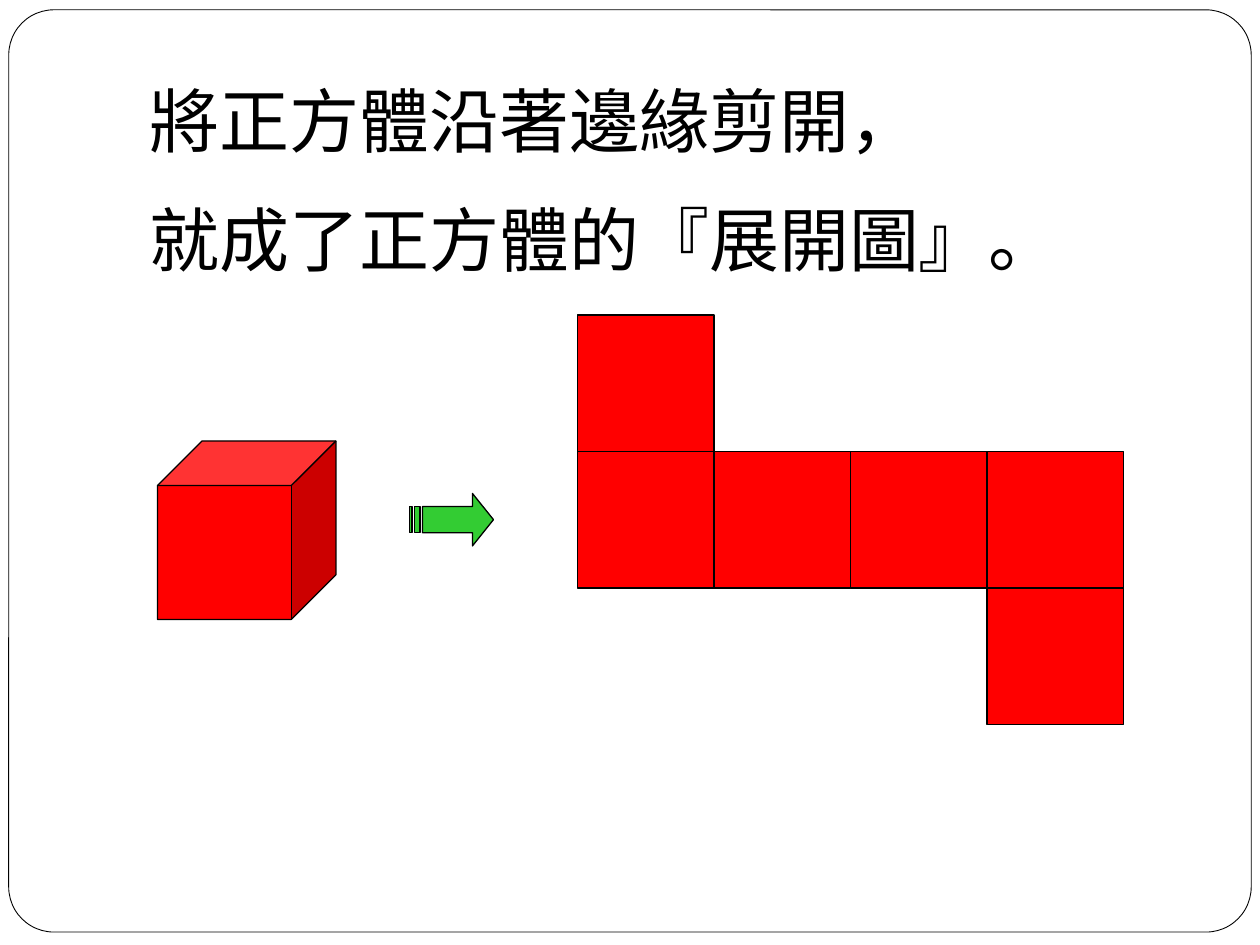
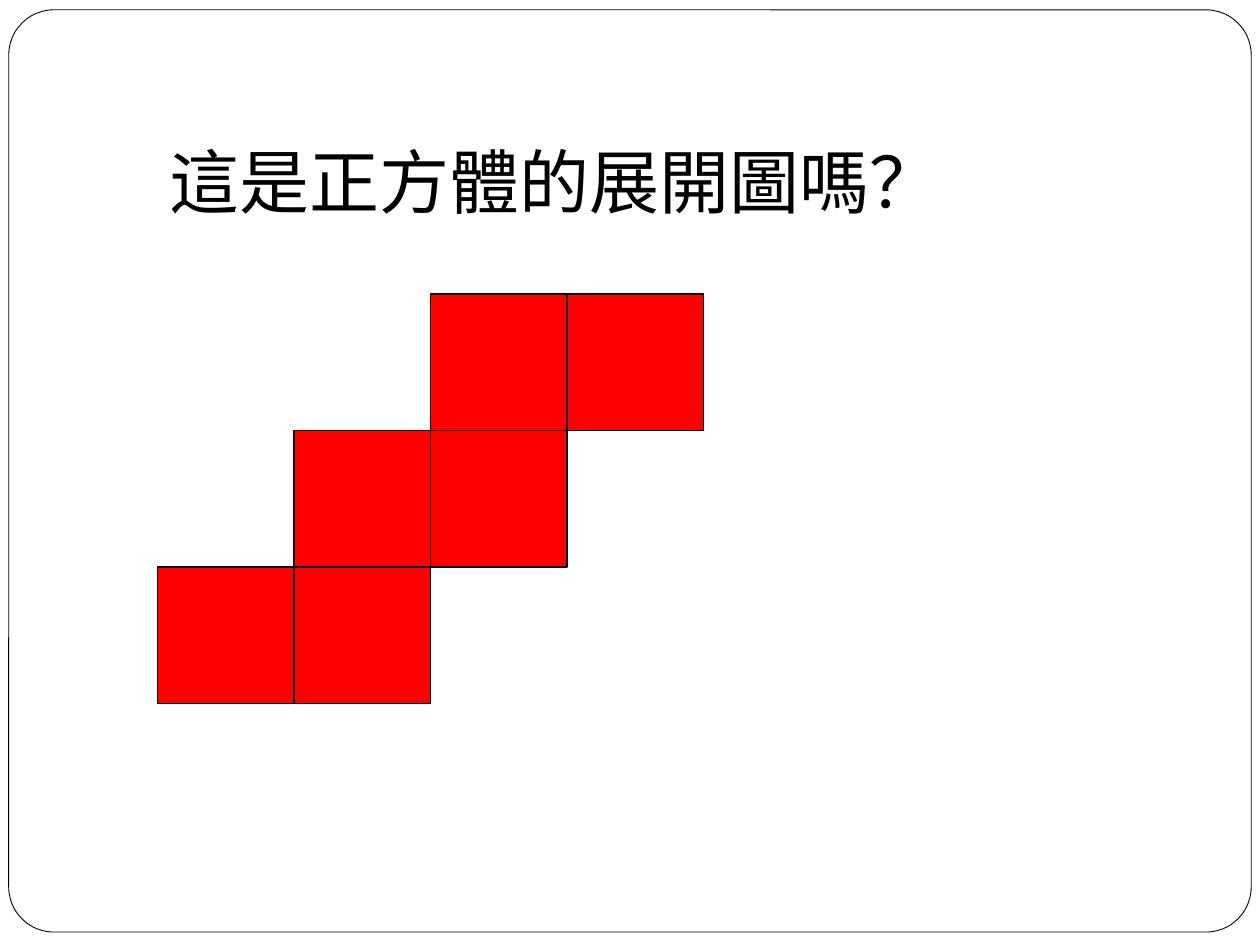
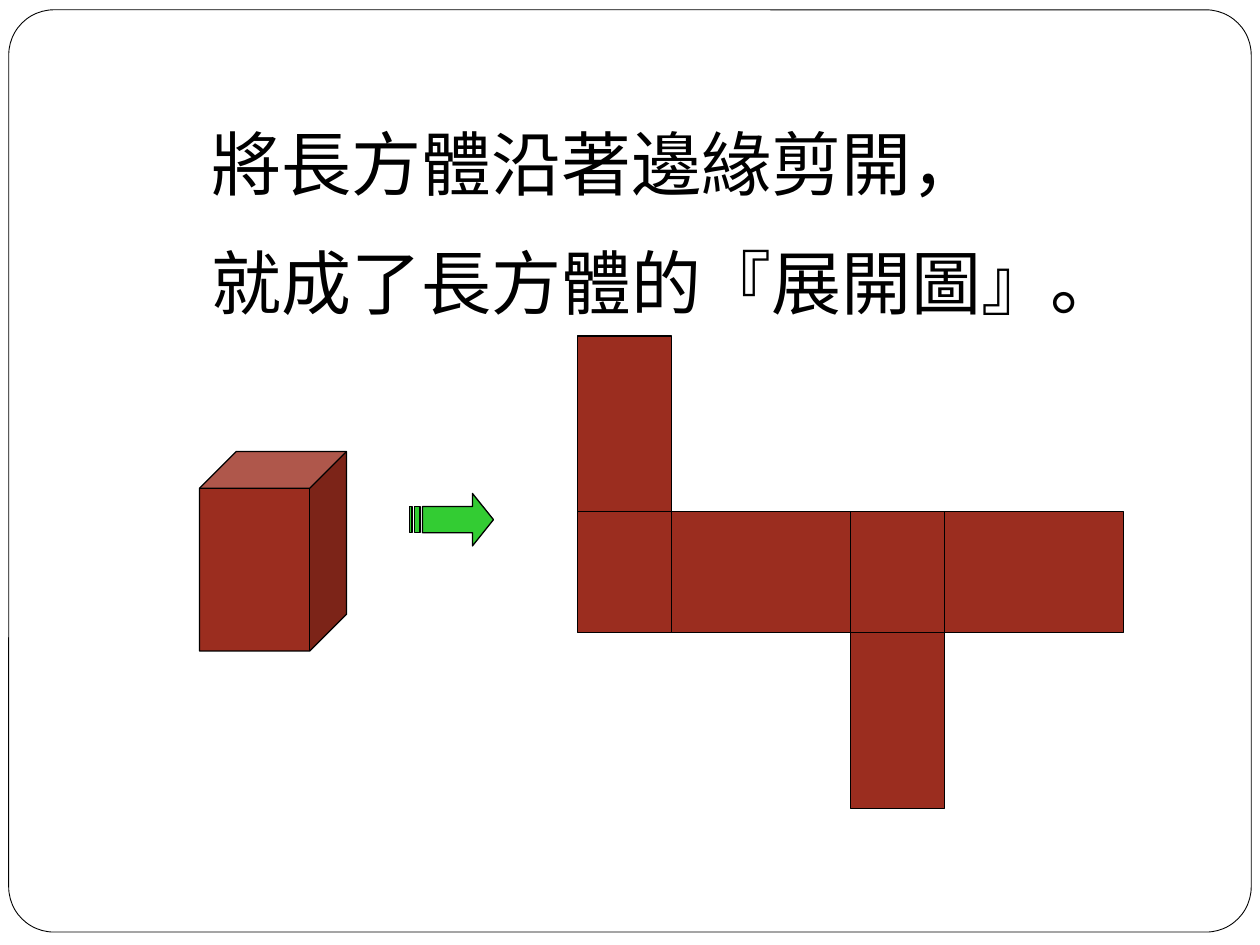
import pptx
import pptx.dml.color
import pptx.enum.shapes
import pptx.enum.text
import pptx.oxml.ns
import pptx.util
import lxml.etree

Pt = pptx.util.Pt
SHAPES = pptx.enum.shapes.MSO_SHAPE
FONT_NAME = "Noto Sans CJK JP"
COLORS = {
    "background": "FFFFFF",
    "ink": "000000",
    "cube": "FF0000",
    "cuboid": "9B2D1F",
    "arrow": "33CC33",
}
SQUARE = 78
CUBOID_COLUMNS = [53.6, 102.4, 53.6, 102.4]
CUBOID_ROWS = [100.5, 69, 100.5]


def rgb(name):
    return pptx.dml.color.RGBColor.from_string(COLORS[name])


def paint(shape, fill, line_width=0.75):
    shape.shadow.inherit = False
    shape.fill.solid()
    shape.fill.fore_color.rgb = rgb(fill)
    shape.line.color.rgb = rgb("ink")
    shape.line.width = Pt(line_width)


def add_preset(shapes, preset, box, fill, line_width=0.75):
    shape = shapes.add_shape(preset, *map(Pt, box))
    paint(shape, fill, line_width)
    return shape


def add_framed_slide(presentation):
    slide = presentation.slides.add_slide(presentation.slide_layouts[6])
    frame = add_preset(
        slide.shapes, SHAPES.ROUNDED_RECTANGLE, (5, 5.6, 710, 527), "background", 0.5
    )
    frame.adjustments[0] = 0.049
    return slide


def add_statement(slide, box, lines):
    text_frame = slide.shapes.add_textbox(*map(Pt, box)).text_frame
    text_frame.word_wrap = True
    text_frame.auto_size = pptx.enum.text.MSO_AUTO_SIZE.SHAPE_TO_FIT_TEXT
    text_frame.margin_top = Pt(7)
    text_frame.text = "\n".join(lines)
    for paragraph in text_frame.paragraphs:
        paragraph.line_spacing = Pt(48)
        paragraph.space_after = Pt(20)
        paragraph.font.size = Pt(40)
        paragraph.font.name = FONT_NAME
        paragraph.font.color.rgb = rgb("ink")
        qn = pptx.oxml.ns.qn
        properties = paragraph._p.pPr.find(qn("a:defRPr"))
        lxml.etree.SubElement(properties, qn("a:ea")).set("typeface", FONT_NAME)


def add_net(slide, left, top, columns, rows, cells, fill):
    group = slide.shapes.add_group_shape()
    for row, column in cells:
        box = (
            left + sum(columns[:column]),
            top + sum(rows[:row]),
            columns[column],
            rows[row],
        )
        add_preset(group.shapes, SHAPES.RECTANGLE, box, fill)


def add_solid(slide, box, fill):
    add_preset(slide.shapes, SHAPES.CUBE, box, fill)


def add_striped_arrow(slide, left, top):
    head = [(36, 0), (36, 7.5), (7.5, 7.5), (7.5, 22.5), (36, 22.5), (36, 30), (48, 15)]
    stripes = [
        [(start, 7.5), (start, 22.5), (end, 22.5), (end, 7.5)]
        for start, end in ((3, 6), (0, 1.5))
    ]
    builder = None
    for outline in [head, *stripes]:
        points = [(Pt(left + x), Pt(top + y)) for x, y in outline]
        if builder is None:
            builder = slide.shapes.build_freeform(*points[0])
        else:
            builder.move_to(*points[0])
        builder.add_line_segments(points[1:], close=True)
    paint(builder.convert_to_shape(), "arrow")


def build_cube_slide(presentation):
    slide = add_framed_slide(presentation)
    cells = [(1, 0), (1, 1), (1, 2), (1, 3), (0, 0), (2, 3)]
    add_net(slide, 330, 180, [SQUARE] * 4, [SQUARE] * 3, cells, "cube")
    add_statement(
        slide,
        (78.5, 37.5, 580, 128),
        ["將正方體沿著邊緣剪開，", "就成了正方體的『展開圖』。"],
    )
    add_solid(slide, (90, 252, 102, 102), "cube")
    add_striped_arrow(slide, 234, 282)


def build_question_slide(presentation):
    slide = add_framed_slide(presentation)
    cells = [(2, 0), (2, 1), (1, 2), (0, 2), (1, 1), (0, 3)]
    add_net(slide, 90, 168, [SQUARE] * 4, [SQUARE] * 3, cells, "cube")
    add_statement(slide, (90, 72, 519, 55.5), ["這是正方體的展開圖嗎？"])


def build_cuboid_slide(presentation):
    slide = add_framed_slide(presentation)
    add_statement(
        slide,
        (114, 62, 535, 128),
        ["將長方體沿著邊緣剪開，", "就成了長方體的『展開圖』。"],
    )
    add_solid(slide, (114, 258, 84, 114), "cuboid")
    add_striped_arrow(slide, 234, 282)
    cells = [(1, 0), (0, 0), (1, 1), (1, 2), (2, 2), (1, 3)]
    add_net(slide, 330, 192, CUBOID_COLUMNS, CUBOID_ROWS, cells, "cuboid")


def main():
    presentation = pptx.Presentation()
    presentation.slide_width = Pt(720)
    presentation.slide_height = Pt(540)
    build_cube_slide(presentation)
    build_question_slide(presentation)
    build_cuboid_slide(presentation)
    presentation.save("out.pptx")


if __name__ == "__main__":
    main()
